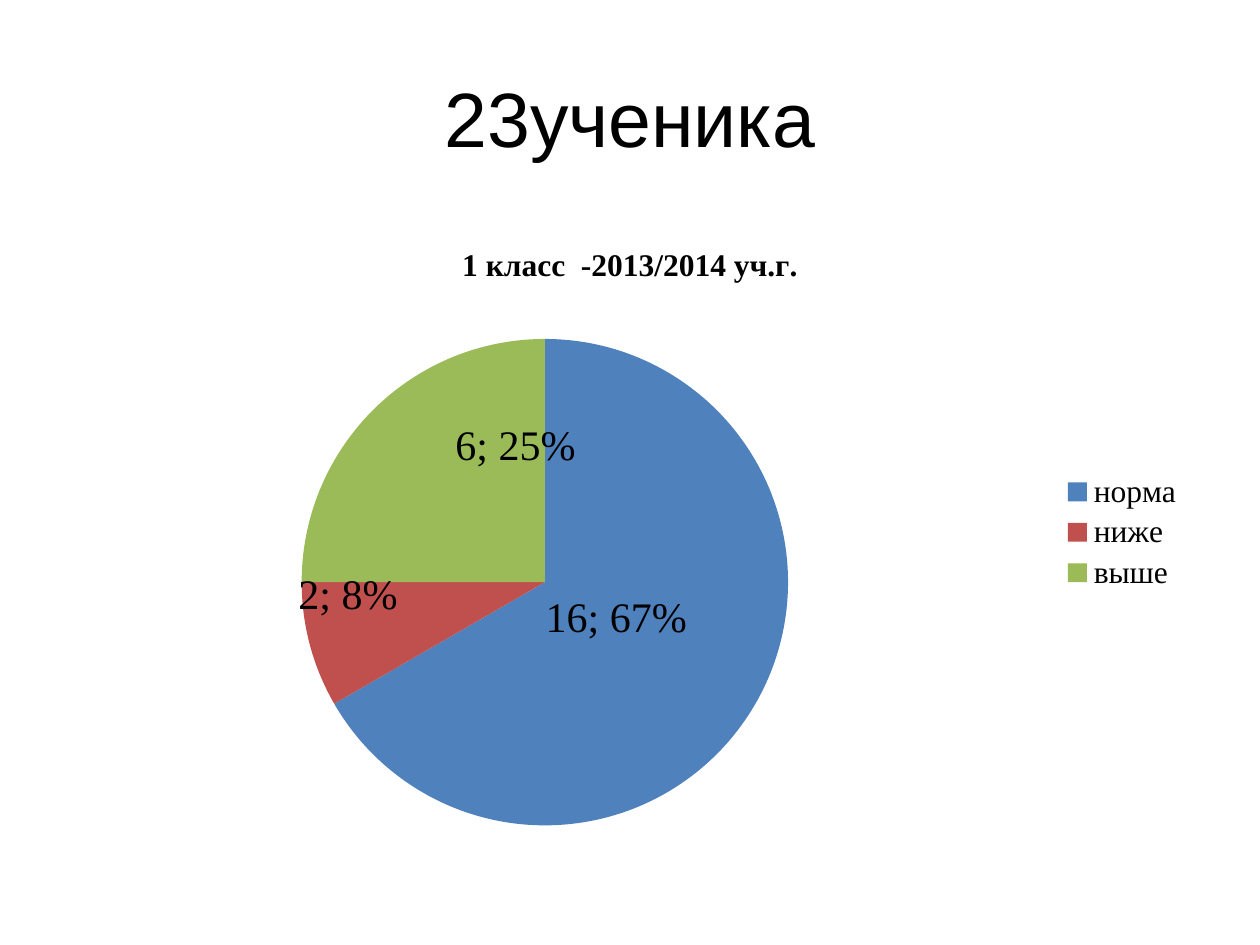
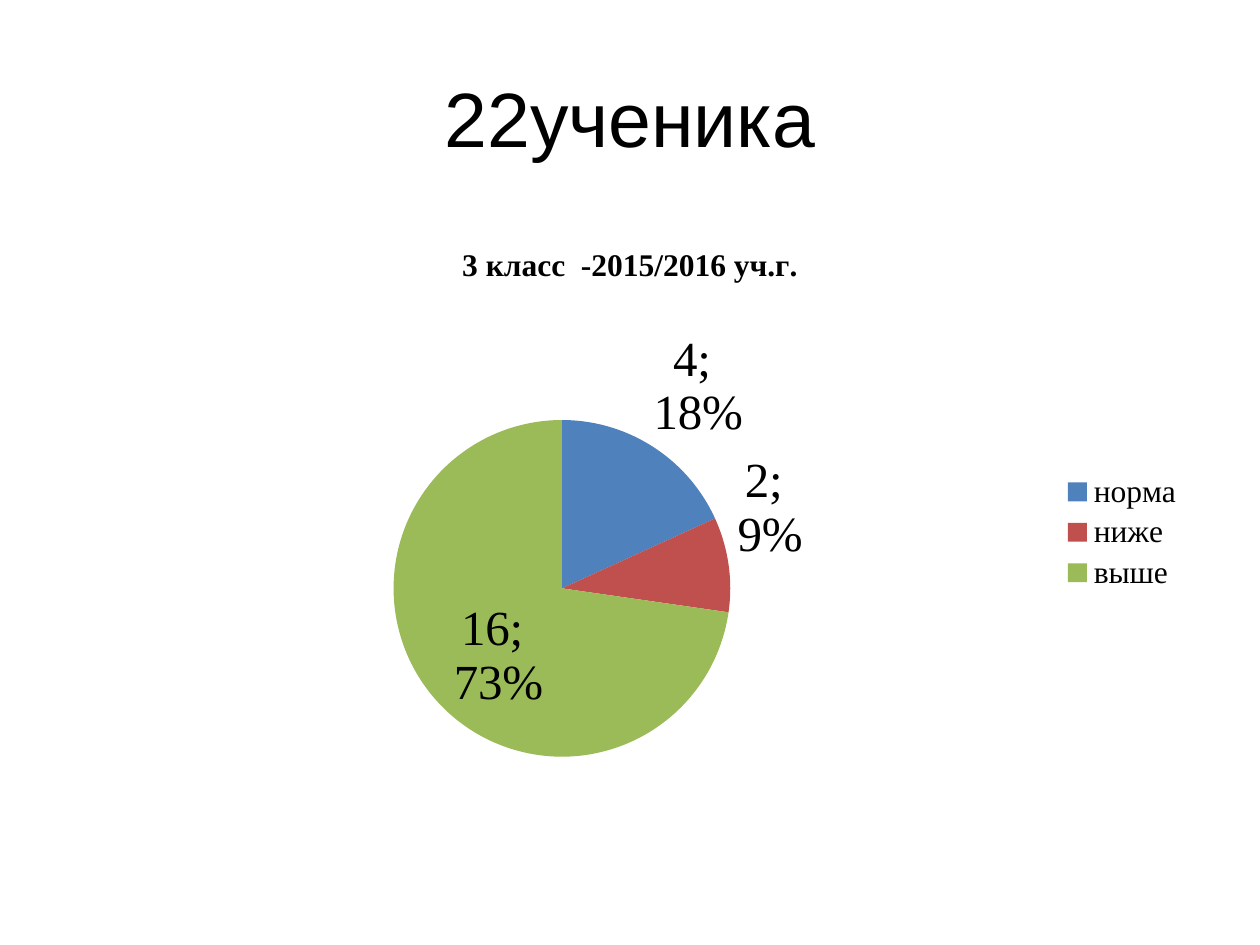
"""Build two slides with pie charts of pupils' results by school year."""
import dataclasses
import typing

import lxml.etree
import pptx
import pptx.chart.chart
import pptx.chart.data
import pptx.dml.color
import pptx.enum.chart
import pptx.enum.text
import pptx.oxml.ns
import pptx.slide
import pptx.util

Inches = pptx.util.Inches
Pt = pptx.util.Pt
qn = pptx.oxml.ns.qn
RGB = pptx.dml.color.RGBColor


@dataclasses.dataclass(frozen=True)
class Theme:
    ink: RGB = RGB.from_string("000000")
    slices: tuple[RGB, ...] = tuple(map(RGB.from_string, ("4F81BD", "C0504D", "9BBB59")))
    title_font: str = "Arial"
    chart_font: str = "Times New Roman"
    title_size: int = 44
    chart_size: int = 18


class Frame(typing.NamedTuple):
    x: float
    y: float
    w: float
    h: float


class Offset(typing.NamedTuple):
    x: float
    y: float


@dataclasses.dataclass(frozen=True)
class ClassResult:
    title: str
    year: str
    pupils: tuple[int, ...]
    pie: Frame
    label_size: int
    separator: str
    label_offsets: tuple[Offset, ...]


THEME = Theme()
TITLE_FRAME = Frame(0.5, 0.3, 9, 1.25)
CHART_FRAME = Frame(0.5, 1.75, 9, 4.95)
LEVELS = ("норма", "ниже ", "выше")
RESULTS = (
    ClassResult("23ученика", "1 класс  -2013/2014 уч.г.", (16, 2, 6),
                Frame(0.21, 0.19, 0.43, 0.78), 24, "; ",
                (Offset(-0.03, -0.04), Offset(-0.07, -0.03), Offset(0.05, -0.08))),
    ClassResult("22ученика", "3 класс  -2015/2016 уч.г.", (4, 2, 16),
                Frame(0.29, 0.32, 0.3, 0.54), 28, "; \n",
                (Offset(0.08, -0.21), Offset(0.11, -0.11), Offset(0, 0.02))),
)


def style_font(font: typing.Any, name: str, size: int, bold: bool = False) -> None:
    font.name = name
    font.size = Pt(size)
    font.bold = bold
    font.color.rgb = THEME.ink


def manual_layout(place: Frame | Offset, inner: bool = False) -> typing.Any:
    layout = lxml.etree.Element(qn("c:layout"))
    manual = lxml.etree.SubElement(layout, qn("c:manualLayout"))
    if inner:
        for tag, value in (("layoutTarget", "inner"), ("xMode", "edge"), ("yMode", "edge")):
            lxml.etree.SubElement(manual, qn(f"c:{tag}"), val=value)
    for tag, value in place._asdict().items():
        lxml.etree.SubElement(manual, qn(f"c:{tag}"), val=str(value))
    return layout


def add_title(slide: pptx.slide.Slide, text: str) -> None:
    box = slide.shapes.title
    box.left, box.top, box.width, box.height = map(Inches, TITLE_FRAME)
    box.text_frame.vertical_anchor = pptx.enum.text.MSO_ANCHOR.MIDDLE
    para = box.text_frame.paragraphs[0]
    para.alignment = pptx.enum.text.PP_ALIGN.CENTER
    span = para.add_run()
    span.text = text
    style_font(span.font, THEME.title_font, THEME.title_size)


def place_pie(chart: pptx.chart.chart.Chart, pie: Frame) -> None:
    plot_area = chart.element.xpath("c:chart/c:plotArea")[0]
    for layout in plot_area.findall(qn("c:layout")):
        plot_area.remove(layout)
    plot_area.insert(0, manual_layout(pie, inner=True))


def format_slices(chart: pptx.chart.chart.Chart, result: ClassResult) -> None:
    series = chart.plots[0].series[0]
    labels = series.data_labels
    labels.show_value = labels.show_percentage = True
    style_font(labels.font, THEME.chart_font, result.label_size)
    for index, colour in enumerate(THEME.slices):
        point = series.points[index]
        point.format.fill.solid()
        point.format.fill.fore_color.rgb = colour
        label = point.data_label
        style_font(label.font, THEME.chart_font, result.label_size)
        label.position = pptx.enum.chart.XL_LABEL_POSITION.CENTER
    label_nodes = chart.element.xpath(".//c:ser/c:dLbls/c:dLbl")
    for node, offset in zip(label_nodes, result.label_offsets):
        node.insert(1, manual_layout(offset))
        node.find(qn("c:showPercent")).set("val", "1")
        lxml.etree.SubElement(node, qn("c:separator")).text = result.separator
    for leader in chart.element.xpath(".//c:showLeaderLines"):
        leader.set("val", "0")


def add_pie(slide: pptx.slide.Slide, result: ClassResult) -> None:
    data = pptx.chart.data.CategoryChartData()
    data.categories = LEVELS
    data.add_series(result.year, result.pupils)
    chart = slide.shapes.add_chart(
        pptx.enum.chart.XL_CHART_TYPE.PIE, *map(Inches, CHART_FRAME), data).chart
    style_font(chart.font, THEME.chart_font, THEME.chart_size)
    chart.has_title = True
    span = chart.chart_title.text_frame.paragraphs[0].add_run()
    span.text = result.year
    style_font(span.font, THEME.chart_font, THEME.chart_size, bold=True)
    chart.has_legend = True
    chart.legend.position = pptx.enum.chart.XL_LEGEND_POSITION.RIGHT
    chart.legend.include_in_layout = False
    chart.plots[0].vary_by_categories = True
    place_pie(chart, result.pie)
    format_slices(chart, result)


def main() -> None:
    deck = pptx.Presentation()
    deck.slide_width, deck.slide_height = Inches(10), Inches(7.5)
    title_only = deck.slide_layouts.get_by_name("Title Only")
    for result in RESULTS:
        page = deck.slides.add_slide(title_only)
        add_title(page, result.title)
        add_pie(page, result)
    deck.save("out.pptx")


if __name__ == "__main__":
    main()
